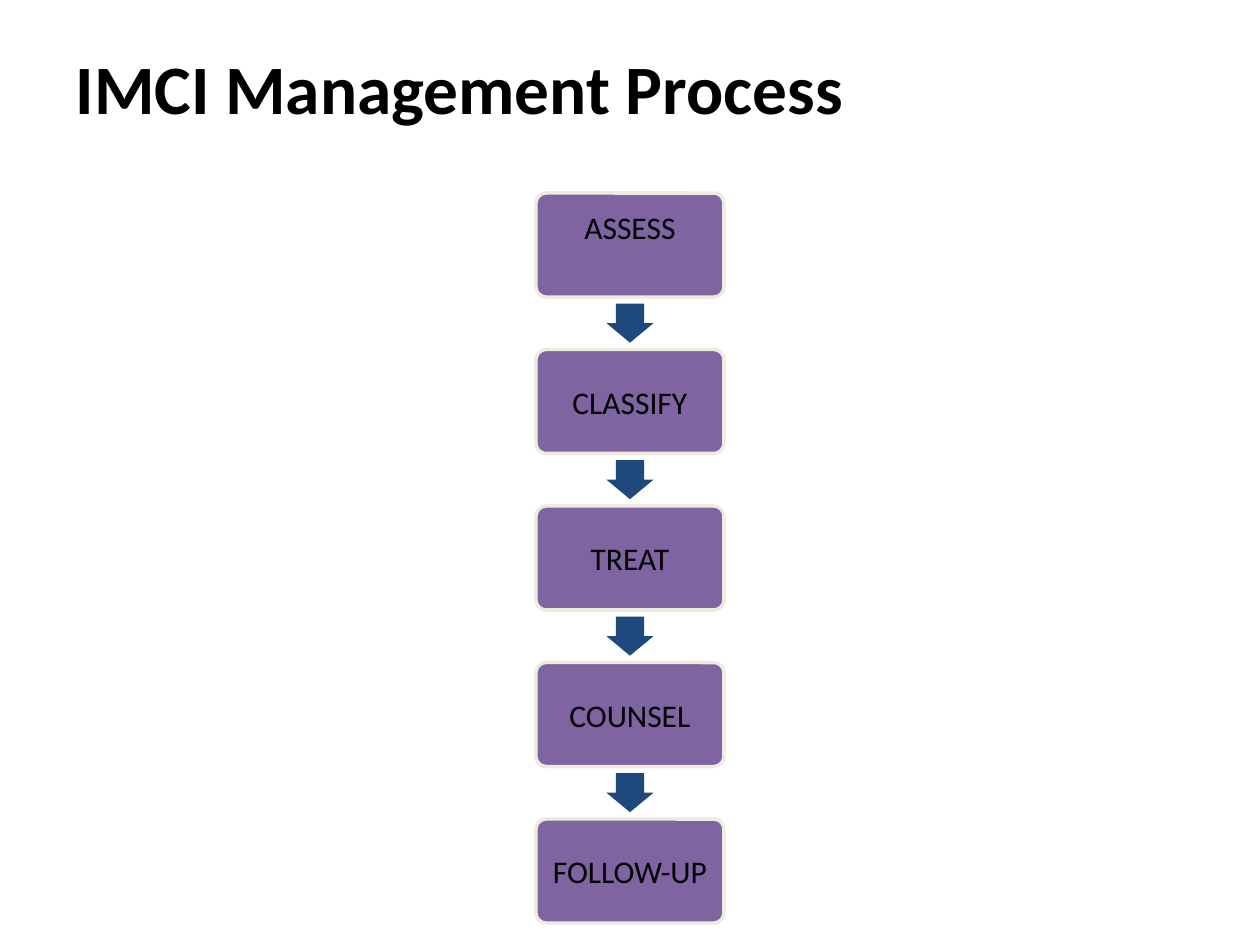
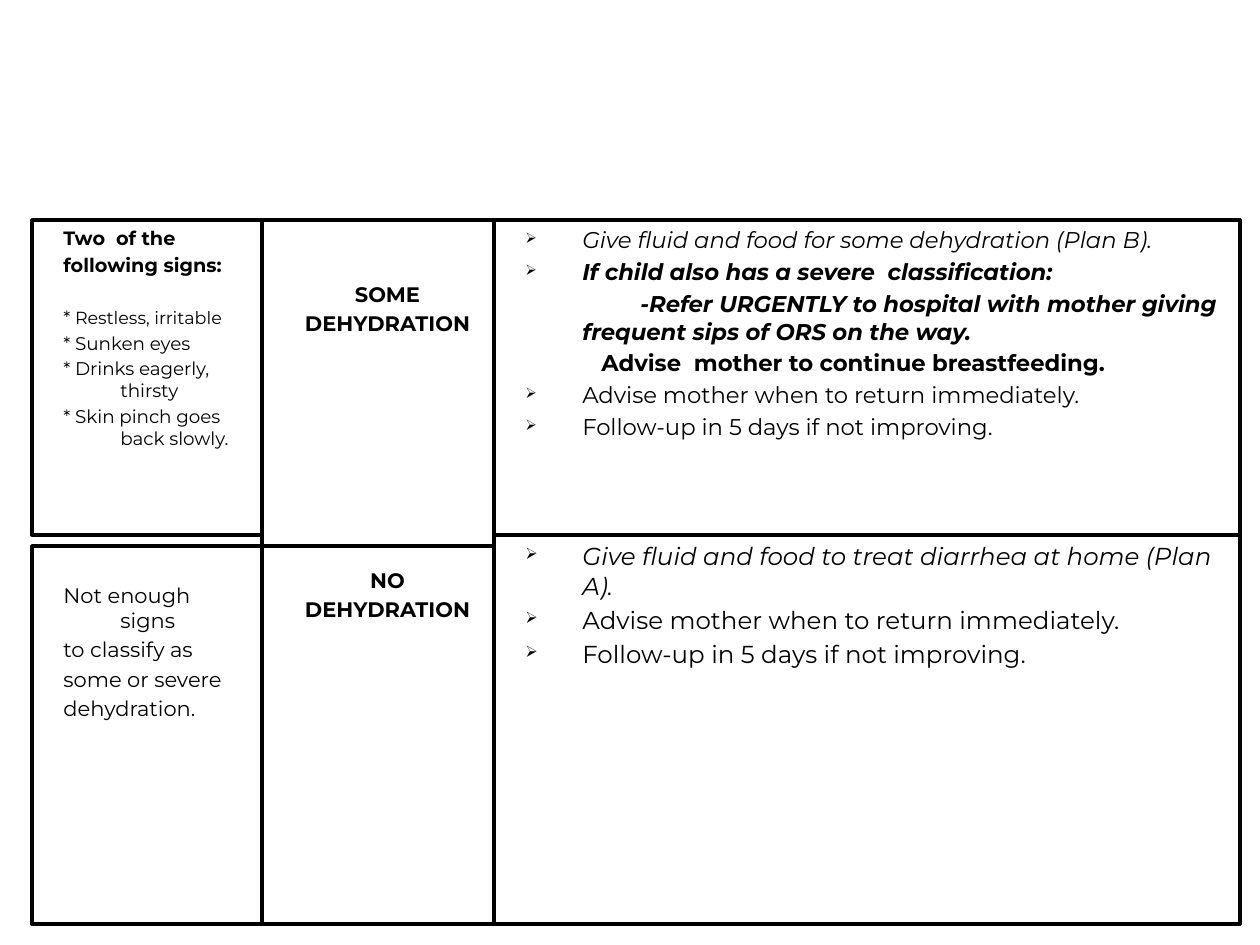
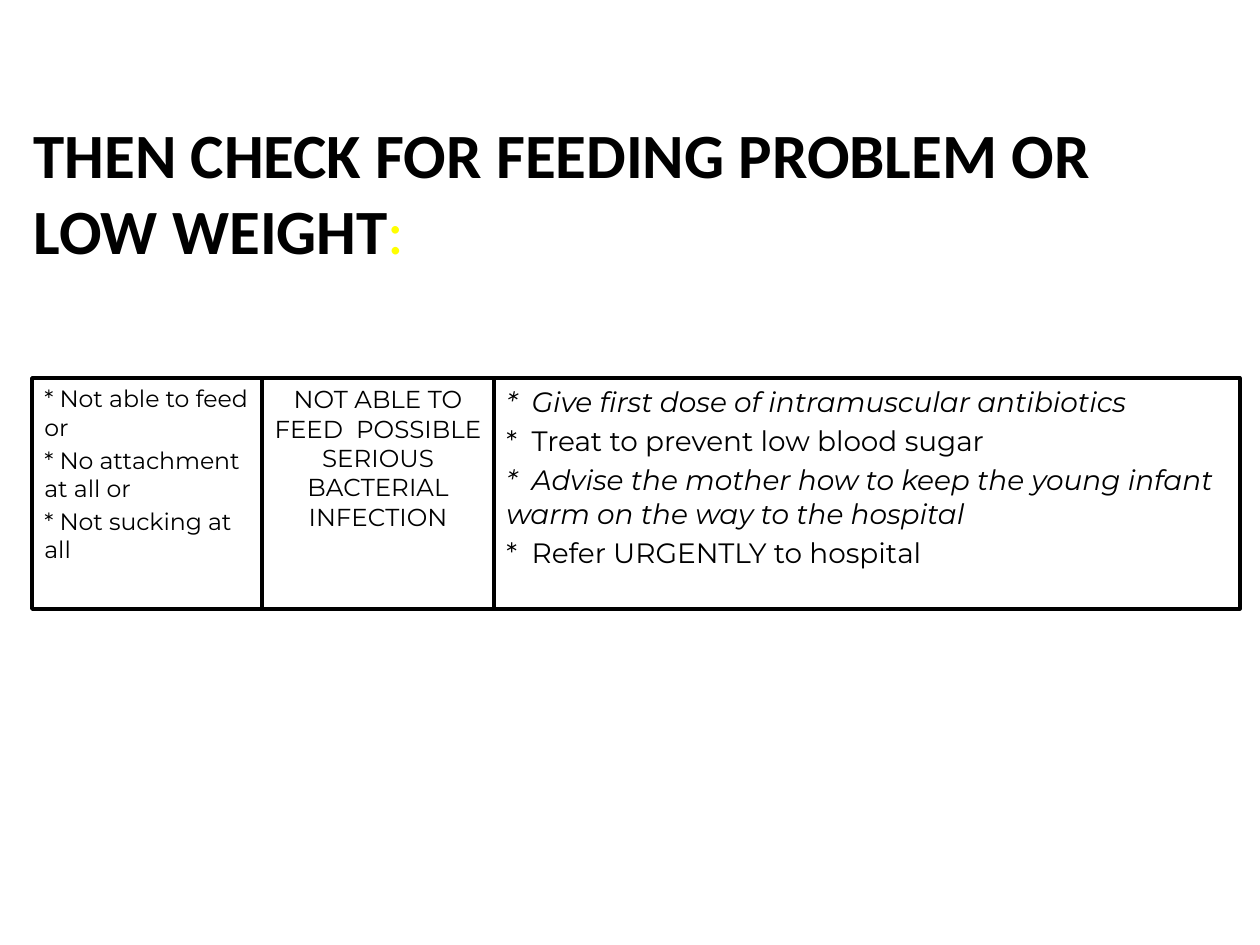
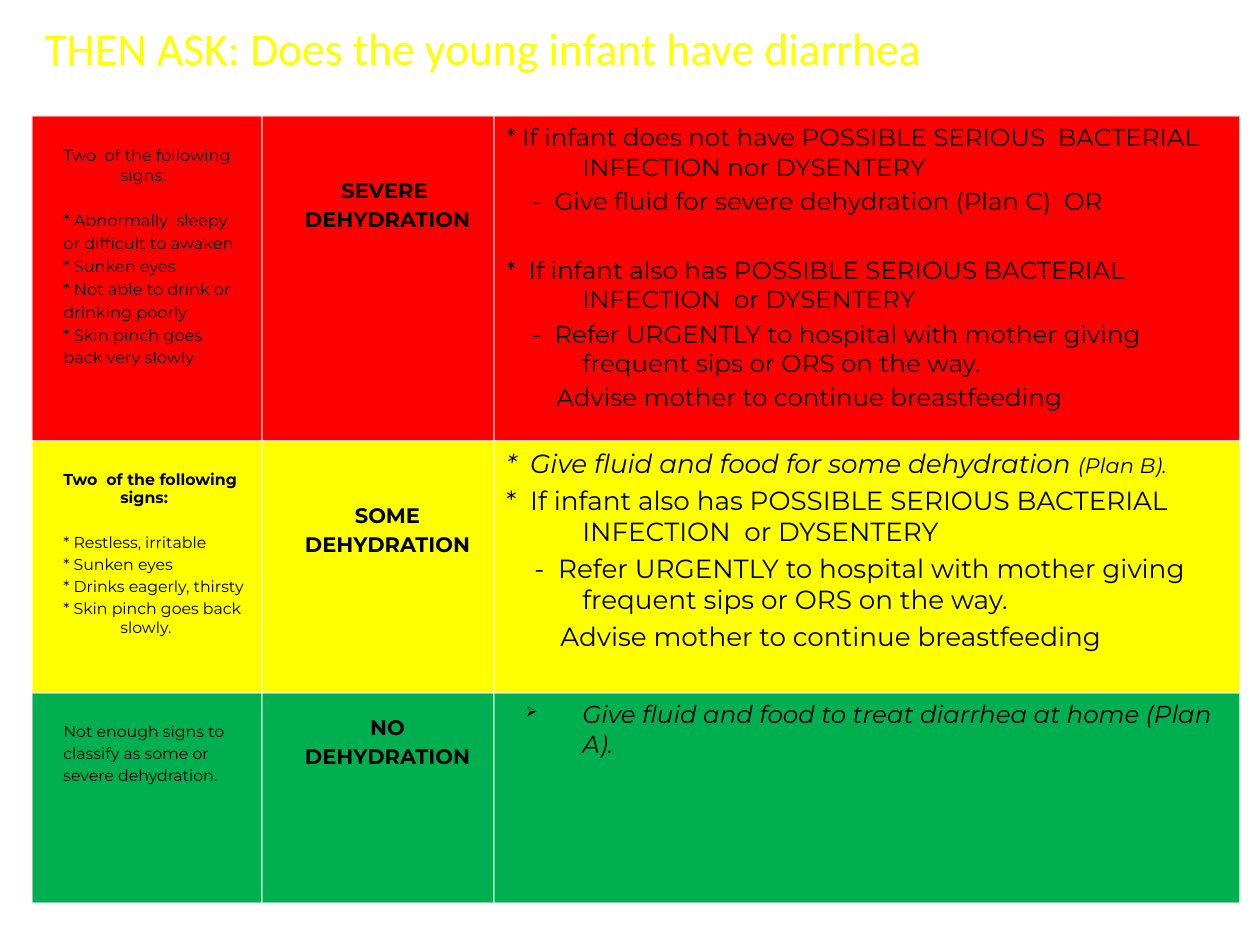
from dataclasses import dataclass
from functools import partial
from itertools import pairwise

from lxml import etree
from pptx import Presentation
from pptx import util as u
from pptx.dml.color import RGBColor
from pptx.enum import shapes, text
from pptx.oxml import ns

COLORS = {
    "ink": "000000",
    "paper": "FFFFFF",
    "step": "8064A2",
    "step_edge": "EEECE1",
    "arrow": "1F497D",
    "red": "FF0000",
    "yellow": "FFFF00",
    "green": "00B050",
}
TITLE_FONT, CELL_FONT = "Calibri", "Montserrat"
COLUMNS = (32, 262, 494, 1240)
TITLE_ONLY, BLANK = 5, 6
LINE_HEIGHT, LINE_GAP = 1.22, 0.2  # as shares of the text size


def px(count):
    return u.Emu(round(count * 914400 / 126))


def rgb(name):
    return RGBColor.from_string(COLORS[name])


@dataclass
class Line:
    """One paragraph; words is a string, or (string, size) pairs where sizes differ."""
    words: object
    size: float = None
    bold: bool = False
    italic: bool = False
    first: int = 0
    margin: int = 0
    skipped: int = 0
    bullet: bool = False
    align: object = text.PP_ALIGN.LEFT


Hanging = partial(Line, first=19, margin=76)
Bullet = partial(Hanging, bullet=True)
Item = partial(Line, margin=76)
Centered = partial(Hanging, align=text.PP_ALIGN.CENTER, bold=True)


@dataclass
class Cell:
    size: float
    lines: list
    lead: int = 0


def style_font(font, name, size, color="ink", bold=False, italic=False):
    font.name, font.size = name, u.Pt(size)
    font.bold, font.italic = bold, italic
    font.color.rgb = rgb(color)


def add_box(page, kind, box, fill, edge=None, weight=2):
    left, top, width, height = map(px, box)
    shape = page.shapes.add_shape(kind, left, top, width, height)
    shape.shadow.inherit = False
    shape.fill.solid()
    shape.fill.fore_color.rgb = rgb(fill)
    if edge:
        shape.line.color.rgb = rgb(edge)
        shape.line.width = u.Pt(weight)
    else:
        shape.line.fill.background()
    return shape


def add_title(page, box, words, size, color="ink", bold=False):
    title = page.shapes.title
    title.left, title.top, title.width, title.height = map(px, box)
    frame = title.text_frame
    frame.word_wrap = True
    frame.auto_size = text.MSO_AUTO_SIZE.NONE
    frame.vertical_anchor = text.MSO_ANCHOR.MIDDLE
    para = frame.paragraphs[0]
    para.alignment = text.PP_ALIGN.LEFT
    para.add_run().text = words
    style_font(para.font, TITLE_FONT, size, color, bold)
    return para


def add_bullet(props):
    color = etree.SubElement(props, ns.qn("a:buClr"))
    etree.SubElement(color, ns.qn("a:srgbClr"), val=COLORS["ink"])
    etree.SubElement(props, ns.qn("a:buSzPct"), val="65000")
    etree.SubElement(props, ns.qn("a:buChar"), char="➢")


def write_line(para, line, size, is_first):
    size = line.size or size
    para.alignment = line.align
    if not is_first:
        skipped = line.skipped * (LINE_HEIGHT + LINE_GAP)
        para.space_before = u.Pt(size * (LINE_GAP + skipped))
    props = para._p.get_or_add_pPr()
    props.set("marL", str(px(line.margin)))
    props.set("indent", str(px(line.first - line.margin)))
    if line.bullet:
        add_bullet(props)
    style_font(para.font, CELL_FONT, size, bold=line.bold, italic=line.italic)
    if isinstance(line.words, str):
        para.add_run().text = line.words
        return
    for words, span_size in line.words:
        span = para.add_run()
        span.text = words
        span.font.size = u.Pt(span_size)


def add_cell(page, box, cell, fill, edge, weight):
    shape = add_box(page, shapes.MSO_SHAPE.RECTANGLE, box, fill, edge, weight)
    frame = shape.text_frame
    frame.word_wrap = True
    frame.vertical_anchor = text.MSO_ANCHOR.TOP
    frame.margin_top += px(cell.lead)
    for index, line in enumerate(cell.lines):
        para = frame.add_paragraph() if index else frame.paragraphs[0]
        write_line(para, line, cell.size, index == 0)
    return shape


def add_row(page, spans, cells, fill="paper", edge="ink", weight=2):
    """Fill the three columns; spans holds each cell's top and bottom."""
    return [
        add_cell(page, (left, top, right - left, bottom - top), cell, fill, edge, weight)
        for (left, right), (top, bottom), cell in zip(pairwise(COLUMNS), spans, cells)
    ]


def add_flow(page, box, steps, step_height=104):
    left, top, width, height = box
    pitch = (height - step_height) / (len(steps) - 1)
    arrow_width, arrow_height = 47, 39
    for index, step in enumerate(steps):
        step_top = top + index * pitch
        shape = add_box(page, shapes.MSO_SHAPE.ROUNDED_RECTANGLE,
                        (left, step_top, width, step_height), "step", "step_edge")
        shape.adjustments[0] = 0.1
        frame = shape.text_frame
        frame.word_wrap = True
        frame.vertical_anchor = text.MSO_ANCHOR.MIDDLE
        frame.margin_left = frame.margin_right = px(10)
        if index == 0:
            frame.margin_bottom += px(36)
        para = frame.paragraphs[0]
        para.alignment = text.PP_ALIGN.CENTER
        para.add_run().text = step
        style_font(para.font, TITLE_FONT, 18)
        if index:
            gap = pitch - step_height
            arrow_box = (left + (width - arrow_width) / 2,
                         step_top - (gap + arrow_height) / 2,
                         arrow_width, arrow_height)
            arrow = add_box(page, shapes.MSO_SHAPE.DOWN_ARROW, arrow_box, "arrow")
            arrow.adjustments[0], arrow.adjustments[1] = 0.6, 0.5


def classification(name, lead=55):
    return Cell(12, [Centered(name), Centered("DEHYDRATION")], lead)


def build_process(page):
    add_title(page, (63, 38, 1134, 98), "IMCI Management Process", 39.6, bold=True)
    add_flow(page, (536, 193, 188, 730),
             ["ASSESS", "CLASSIFY", "TREAT", "COUNSEL", "FOLLOW-UP"])


def build_child_dehydration(page):
    add_row(page, [(220, 535), (220, 546), (220, 535)], [
        Cell(10.5, [
            Hanging("Two  of the", 11, bold=True),
            Hanging("following signs:", 11, bold=True),
            Hanging([("*", 10.5), (" Restless, irritable", 10)], skipped=1),
            Hanging("* Sunken eyes"),
            Hanging("* Drinks eagerly, thirsty"),
            Hanging("* Skin pinch goes back slowly."),
        ]),
        classification("SOME"),
        Cell(13, [
            Bullet("Give fluid and food for some dehydration (Plan B).", italic=True),
            Bullet("If child also has a severe  classification:", bold=True, italic=True),
            Item("-Refer URGENTLY to hospital with mother giving frequent sips "
                 "of ORS on the way.", bold=True, italic=True, first=134),
            Item("Advise  mother to continue breastfeeding.", bold=True, first=95),
            Bullet("Advise mother when to return immediately."),
            Bullet("Follow-up in 5 days if not improving."),
        ]),
    ])
    add_row(page, [(546, 924), (546, 924), (535, 924)], [
        Cell(12, [
            Hanging("Not enough signs"),
            Hanging("to classify as"),
            Hanging("some or severe"),
            Hanging("dehydration."),
        ], lead=30),
        classification("NO", lead=15),
        Cell(14, [
            Bullet("Give fluid and food to treat diarrhea at home (Plan A).", italic=True),
            Bullet("Advise mother when to return immediately."),
            Bullet("Follow-up in 5 days if not improving."),
        ]),
    ])


def build_feeding(page):
    para = add_title(page, (21, 142, 1207, 98),
                     "THEN CHECK FOR FEEDING PROBLEM OR LOW WEIGHT", 36, bold=True)
    colon = para.add_run()
    colon.text = ":"
    colon.font.bold = False
    colon.font.color.rgb = rgb("yellow")
    add_row(page, [(378, 609)] * 3, [
        Cell(13.5, [
            Line("* Not able to feed or"),
            Line("* No attachment at all or"),
            Line("* Not sucking at all"),
        ]),
        Cell(14, [Line("NOT ABLE TO FEED  POSSIBLE SERIOUS BACTERIAL INFECTION",
                       align=text.PP_ALIGN.CENTER)]),
        Cell(16, [
            Line("*  Give first dose of intramuscular antibiotics", italic=True),
            Item("*  Treat to prevent low blood sugar"),
            Line("*  Advise the mother how to keep the young infant warm "
                 "on the way to the hospital", italic=True),
            Item("*  Refer URGENTLY to hospital"),
        ]),
    ])


def referral(dash, advice, skipped=0):
    """Lines shared by the two urgent rows, with their first-line starts."""
    return [
        Item("*  If infant also has POSSIBLE SERIOUS BACTERIAL INFECTION  or DYSENTERY",
             skipped=skipped),
        Item("-  Refer URGENTLY to hospital with mother giving frequent sips "
             "or ORS on the way.", first=dash),
        Item("Advise mother to continue breastfeeding", first=advice),
    ]


def build_infant_diarrhea(page):
    add_title(page, (32, 0, 1218, 94),
              "THEN ASK: Does the young infant have diarrhea", 26, "yellow")
    severe = [
        Cell(9.3, [
            Hanging("Two  of the following signs:"),
            Hanging("* Abnormally  sleepy", skipped=1),
            Hanging("or difficult to awaken"),
            Hanging("* Sunken eyes"),
            Hanging("* Not able to drink or"),
            Hanging("drinking poorly"),
            Hanging("* Skin pinch goes"),
            Hanging("back very slowly"),
        ], lead=23),
        classification("SEVERE "),
        Cell(14, [
            Item("* If infant does not have POSSIBLE SERIOUS  BACTERIAL "
                 "INFECTION nor DYSENTERY"),
            Item("-  Give fluid for severe dehydration (Plan C)  OR", first=26),
            *referral(26, 50, skipped=1),
        ]),
    ]
    some = [
        Cell(9, [
            Hanging("Two  of the following signs:", bold=True),
            Hanging("* Restless, irritable", skipped=1),
            Hanging("* Sunken eyes"),
            Hanging("* Drinks eagerly, thirsty"),
            Hanging("* Skin pinch goes back slowly."),
        ], lead=22),
        classification("SOME"),
        Cell(15, [
            Line([("*  Give fluid and food for some dehydration ", 15),
                  ("(Plan B).", 12)], italic=True),
            *referral(28, 54),
        ]),
    ]
    none = [
        Cell(9, [
            Hanging("Not enough signs to"),
            Hanging("classify as some or"),
            Hanging("severe dehydration."),
        ], lead=22),
        classification("NO", lead=15),
        Cell(14, [Bullet("Give fluid and food to treat diarrhea at home (Plan A).",
                         italic=True)]),
    ]
    rows = zip(pairwise((116, 441, 693, 903)),
               (severe, some, none), ("red", "yellow", "green"))
    for span, cells, fill in rows:
        for shape in add_row(page, [span] * 3, cells, fill, "paper", 0.75):
            edge = shape.line._ln.find(".//" + ns.qn("a:srgbClr"))
            etree.SubElement(edge, ns.qn("a:alpha"), val="72000")


def main():
    deck = Presentation()
    deck.slide_width, deck.slide_height = px(1260), px(945)
    for build, layout in (
        (build_process, TITLE_ONLY),
        (build_child_dehydration, BLANK),
        (build_feeding, TITLE_ONLY),
        (build_infant_diarrhea, TITLE_ONLY),
    ):
        build(deck.slides.add_slide(deck.slide_layouts[layout]))
    deck.save("out.pptx")


if __name__ == "__main__":
    main()
